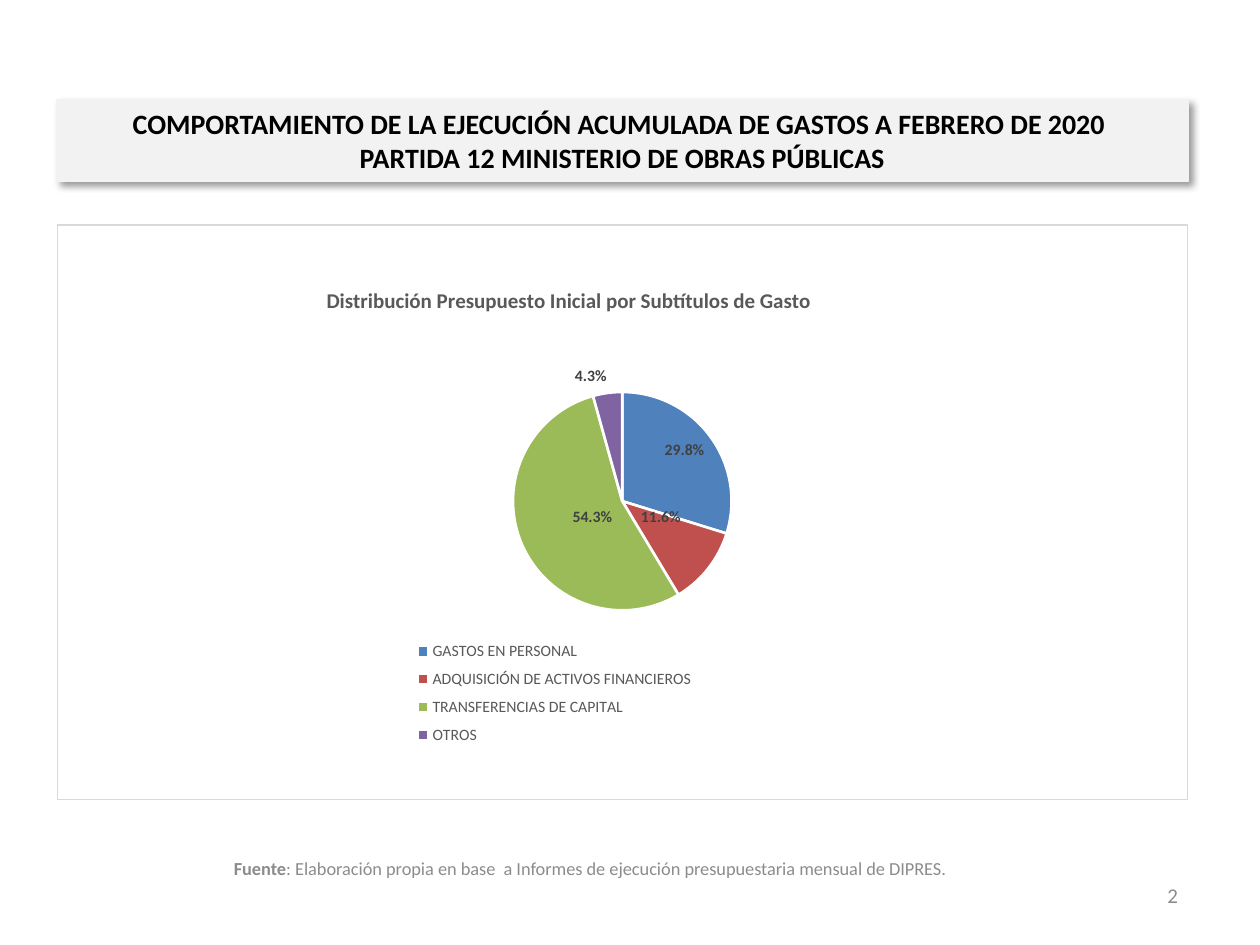
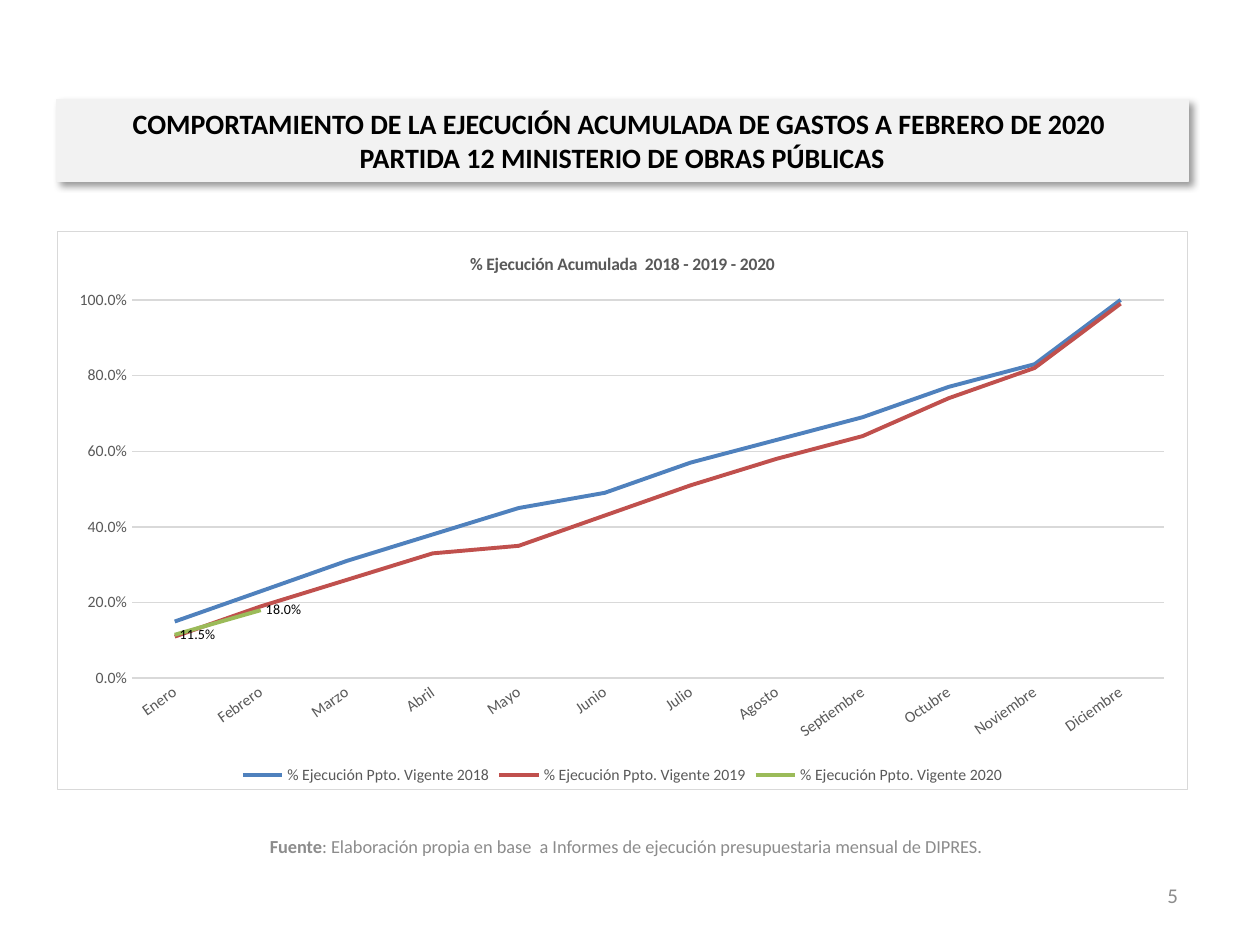
from lxml.etree import SubElement
from pptx import Presentation
from pptx.chart.data import CategoryChartData
from pptx.dml.color import RGBColor
from pptx.enum.chart import XL_CHART_TYPE, XL_LABEL_POSITION, XL_LEGEND_POSITION, XL_TICK_MARK
from pptx.enum.shapes import MSO_SHAPE
from pptx.enum.text import MSO_ANCHOR, MSO_AUTO_SIZE, PP_ALIGN
from pptx.oxml import parse_xml
from pptx.oxml.ns import nsdecls, qn
from pptx.util import Cm, Pt

HEADING = "COMPORTAMIENTO DE LA EJECUCIÓN ACUMULADA DE GASTOS A FEBRERO DE 2020 \vPARTIDA 12 MINISTERIO DE OBRAS PÚBLICAS"
SOURCE = ("Fuente", ": Elaboración propia en base  a Informes de ejecución presupuestaria mensual de DIPRES.")
FONT = "Calibri"
BLACK, WHITE, BAND, BORDER = "000000", "FFFFFF", "F2F2F2", "D9D9D9"
MUTED, CHART_TEXT, LABEL_TEXT = "8C8C8C", "595959", "404040"
ACCENTS = ["4F81BD", "C0504D", "9BBB59", "8064A2"]
LEFT, WIDTH = 1.14, 22.81
PERCENT = "0.0%"

PIE_TITLE = "Distribución Presupuesto Inicial por Subtítulos de Gasto"
EXPENSES = [
    ("GASTOS EN PERSONAL", 29.8, XL_LABEL_POSITION.INSIDE_END, None),
    ("ADQUISICIÓN DE ACTIVOS FINANCIEROS", 11.6, XL_LABEL_POSITION.CENTER, (-0.004, -0.03)),
    ("TRANSFERENCIAS DE CAPITAL", 54.3, XL_LABEL_POSITION.CENTER, (0.018, -0.01)),
    ("OTROS", 4.3, XL_LABEL_POSITION.OUTSIDE_END, None),
]

LINE_TITLE = "% Ejecución Acumulada  2018 - 2019 - 2020"
MONTHS = ["Enero", "Febrero", "Marzo", "Abril", "Mayo", "Junio", "Julio",
          "Agosto", "Septiembre", "Octubre", "Noviembre", "Diciembre"]
EXECUTION = {
    2018: [0.15, 0.23, 0.31, 0.38, 0.45, 0.49, 0.57, 0.63, 0.69, 0.77, 0.83, 1],
    2019: [0.11, 0.19, 0.26, 0.33, 0.35, 0.43, 0.51, 0.58, 0.64, 0.74, 0.82, 0.99],
    2020: [0.115, 0.18],
}


def color(code):
    return RGBColor.from_string(code)


def style(font, size, code, bold=False):
    font.name, font.size, font.bold = FONT, Pt(size), bold
    font.color.rgb = color(code)


def stroke(line, code, width):
    line.color.rgb = color(code)
    line.width = Pt(width)


def manual_layout(x, y, width=None, height=None, target=None, edge=True):
    layout = parse_xml(f"<c:layout {nsdecls('c')}><c:manualLayout/></c:layout>")
    settings = [("layoutTarget", target)]
    if edge:
        settings += [("xMode", "edge"), ("yMode", "edge")]
    settings += [("x", x), ("y", y), ("w", width), ("h", height)]
    for tag, value in settings:
        if value is not None:
            SubElement(layout[0], qn(f"c:{tag}")).set("val", str(value))
    return layout


def place(parent, layout, after=None):
    for old in parent.findall(qn("c:layout")):
        parent.remove(old)
    if after is None:
        parent.insert(0, layout)
    else:
        parent.find(qn(after)).addnext(layout)


def add_text(page, place_at, texts, size, align):
    box = page.shapes.add_textbox(*map(Cm, place_at))
    frame = box.text_frame
    frame.word_wrap = True
    frame.vertical_anchor = MSO_ANCHOR.MIDDLE
    para = frame.paragraphs[0]
    para.alignment = align
    for index, text in enumerate(texts):
        span = para.add_run()
        span.text = text
        style(span.font, size, MUTED, bold=len(texts) > 1 and index == 0)


def add_heading(page):
    band = page.shapes.add_shape(MSO_SHAPE.RECTANGLE, Cm(LEFT), Cm(2.01), Cm(WIDTH), Cm(1.65))
    band.fill.solid()
    band.fill.fore_color.rgb = color(BAND)
    stroke(band.line, BAND, 0.75)
    band.shadow.inherit = False
    band.element.spPr.find(qn("a:effectLst")).append(parse_xml(
        f'<a:outerShdw {nsdecls("a")} blurRad="{Pt(4)}" dist="{Pt(3)}" dir="2700000" algn="tl" rotWithShape="0">'
        f'<a:srgbClr val="{BLACK}"><a:alpha val="40000"/></a:srgbClr></a:outerShdw>'))
    frame = band.text_frame
    frame.text = HEADING
    frame.word_wrap = True
    frame.auto_size = MSO_AUTO_SIZE.SHAPE_TO_FIT_TEXT
    frame.vertical_anchor = MSO_ANCHOR.MIDDLE
    para = frame.paragraphs[0]
    para.alignment = PP_ALIGN.CENTER
    for span in para.runs:
        style(span.font, 16, BLACK, bold=True)


def add_page(deck, number, source_at):
    page = deck.slides.add_slide(deck.slide_layouts[6])
    add_text(page, source_at, SOURCE, 10.5, PP_ALIGN.CENTER)
    add_text(page, (18.08, 17.53, 5.92, 1.02), [str(number)], 12, PP_ALIGN.RIGHT)
    add_heading(page)
    return page


def add_chart(page, kind, data, top, height, title, title_size, plot_area):
    chart = page.shapes.add_chart(kind, Cm(LEFT), Cm(top), Cm(WIDTH), Cm(height), data).chart
    style(chart.font, 10, BLACK)
    chart.has_title = True
    frame = chart.chart_title.text_frame
    frame.text = title
    style(frame.paragraphs[0].runs[0].font, title_size, CHART_TEXT, bold=True)
    chart.has_legend = True
    chart.legend.position = XL_LEGEND_POSITION.BOTTOM
    chart.legend.include_in_layout = False
    style(chart.legend.font, 9, CHART_TEXT)
    chart.element.find(qn("c:chart")).addnext(parse_xml(
        f'<c:spPr {nsdecls("c", "a")}><a:solidFill><a:srgbClr val="{WHITE}"/></a:solidFill>'
        f'<a:ln w="{Pt(0.75)}"><a:solidFill><a:srgbClr val="{BORDER}"/></a:solidFill></a:ln></c:spPr>'))
    place(next(chart.element.iter(qn("c:plotArea"))), manual_layout(*plot_area, target="inner"))
    return chart


def add_budget_pie(page):
    data = CategoryChartData()
    data.categories = [name for name, *_ in EXPENSES]
    data.add_series("Presupuesto Inicial", [value for _, value, *_ in EXPENSES])
    chart = add_chart(page, XL_CHART_TYPE.PIE, data, 4.52, 11.61, PIE_TITLE, 12, (0, 0.291, 1, 0.38))
    place(next(chart.element.iter(qn("c:title"))), manual_layout(0.235, 0.1), "c:tx")
    place(chart.legend._element, manual_layout(0.29, 0.71, 0.3, 0.21), "c:legendPos")
    plot = chart.plots[0]
    plot.vary_by_categories = True
    labels = plot.series[0].data_labels
    labels.show_percentage, labels.show_value = True, False
    labels.number_format, labels.number_format_is_linked = PERCENT, False
    style(labels.font, 9, LABEL_TEXT, bold=True)
    for index, (_, _, position, _) in enumerate(EXPENSES):
        point = plot.series[0].points[index]
        point.format.fill.solid()
        point.format.fill.fore_color.rgb = color(ACCENTS[index])
        stroke(point.format.line, WHITE, 1.5)
        style(point.data_label.font, 9, LABEL_TEXT, bold=True)
        point.data_label.position = position
    for label, (_, _, _, offset) in zip(chart.element.iter(qn("c:dLbl")), EXPENSES):
        label.find(qn("c:showVal")).set("val", "0")
        label.find(qn("c:showPercent")).set("val", "1")
        label.find(qn("c:idx")).addnext(parse_xml(
            f'<c:numFmt {nsdecls("c")} formatCode="{PERCENT}" sourceLinked="0"/>'))
        if offset:
            place(label, manual_layout(*offset, edge=False), "c:idx")


def add_execution_lines(page):
    data = CategoryChartData(number_format=PERCENT)
    data.categories = MONTHS
    for year, values in EXECUTION.items():
        data.add_series(f"% Ejecución Ppto. Vigente {year}", values + [None] * (len(MONTHS) - len(values)))
    chart = add_chart(page, XL_CHART_TYPE.LINE, data, 4.65, 11.28, LINE_TITLE, 10, (0.066, 0.123, 0.913, 0.678))
    for series, code in zip(chart.plots[0].series, ACCENTS):
        series.smooth = False
        stroke(series.format.line, code, 2.25)
    labels = series.data_labels
    labels.show_value = True
    labels.number_format, labels.number_format_is_linked = PERCENT, False
    labels.position = XL_LABEL_POSITION.RIGHT
    style(labels.font, 8, BLACK)

    months, shares = chart.category_axis, chart.value_axis
    for axis in (months, shares):
        axis.major_tick_mark = axis.minor_tick_mark = XL_TICK_MARK.NONE
        style(axis.tick_labels.font, 9, CHART_TEXT)
    stroke(months.format.line, BORDER, 1)
    next(months._element.iter(qn("a:bodyPr"))).set("rot", "-2100000")
    shares.minimum_scale, shares.maximum_scale, shares.major_unit = 0, 1, 0.2
    shares.tick_labels.number_format = PERCENT
    shares.tick_labels.number_format_is_linked = False
    shares.format.line.fill.background()
    shares.has_major_gridlines = True
    stroke(shares.major_gridlines.format.line, BORDER, 0.75)


def main():
    deck = Presentation()
    deck.slide_width, deck.slide_height = Cm(25.4), Cm(19.05)
    add_budget_pie(add_page(deck, 2, (1.5, 16.99, 20.8, 1.02)))
    add_execution_lines(add_page(deck, 5, (1.55, 16.54, 22.15, 1.02)))
    deck.save("out.pptx")


if __name__ == "__main__":
    main()
